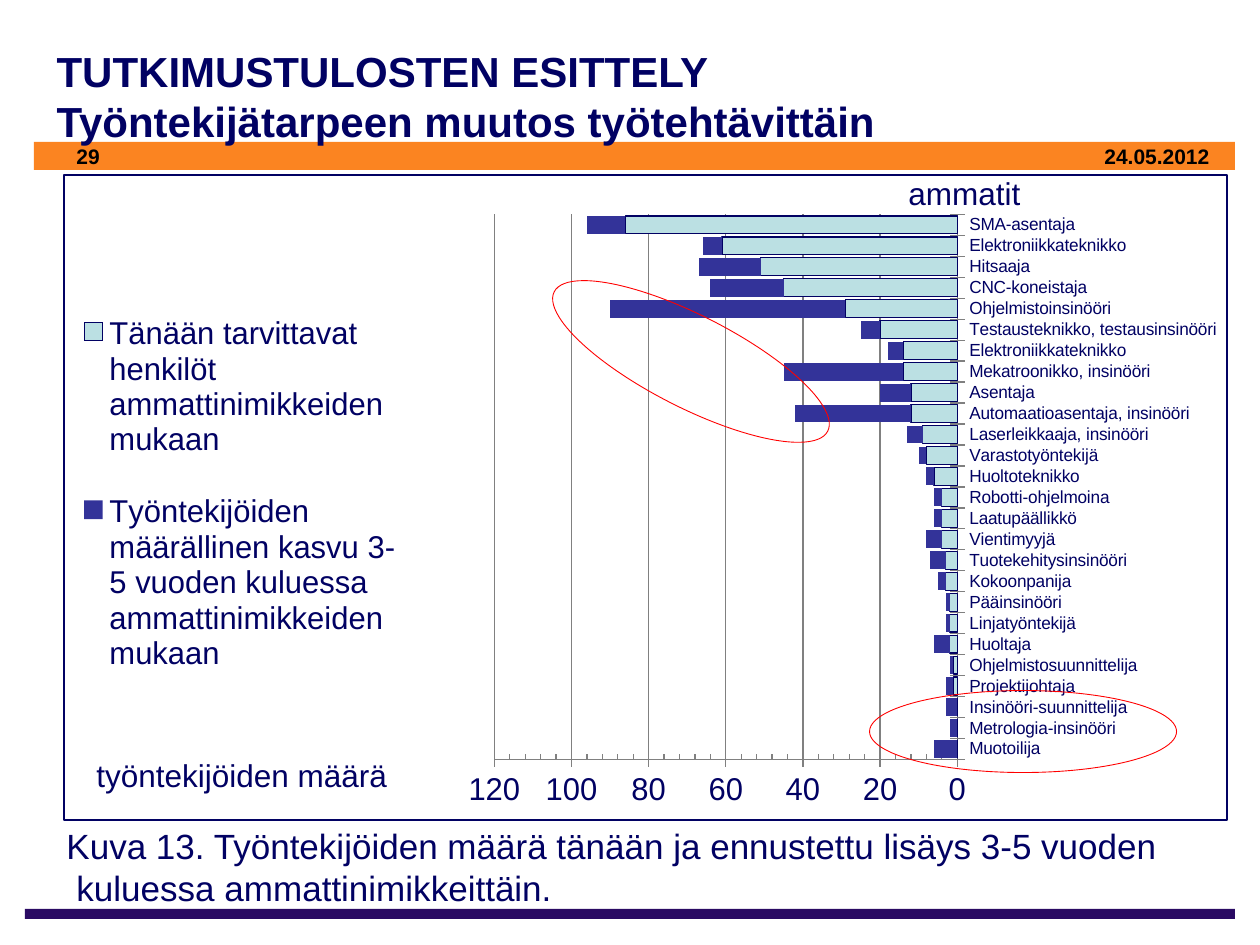
from pptx import Presentation
from pptx.chart.data import CategoryChartData
from pptx.dml.color import RGBColor
from pptx.enum.chart import XL_CHART_TYPE, XL_LEGEND_POSITION, XL_TICK_MARK
from pptx.enum.shapes import MSO_SHAPE
from pptx.enum.text import MSO_ANCHOR, PP_ALIGN
from pptx.oxml import parse_xml
from pptx.oxml.ns import nsdecls, qn
from pptx.util import Pt

BAR_STACKED = XL_CHART_TYPE.BAR_STACKED
LEGEND_RIGHT = XL_LEGEND_POSITION.RIGHT
CROSS, INSIDE = XL_TICK_MARK.CROSS, XL_TICK_MARK.INSIDE
RECTANGLE, OVAL = MSO_SHAPE.RECTANGLE, MSO_SHAPE.OVAL
TOP, MIDDLE, BOTTOM = MSO_ANCHOR.TOP, MSO_ANCHOR.MIDDLE, MSO_ANCHOR.BOTTOM
LEFT = PP_ALIGN.LEFT

NAVY, RED, GRAY, BLACK = "010163", "FF0000", "808080", "000000"
ORANGE, PURPLE, PALE, INDIGO = "FB8421", "2A0A63", "BBE0E3", "333399"

JOBS = [
    ("Muotoilija", 0, 6),
    ("Metrologia-insinööri", 0, 2),
    ("Insinööri-suunnittelija", 0, 3),
    ("Projektijohtaja", 1, 2),
    ("Ohjelmistosuunnittelija", 1, 1),
    ("Huoltaja", 2, 4),
    ("Linjatyöntekijä", 2, 1),
    ("Pääinsinööri", 2, 1),
    ("Kokoonpanija", 3, 2),
    ("Tuotekehitysinsinööri", 3, 4),
    ("Vientimyyjä", 4, 4),
    ("Laatupäällikkö", 4, 2),
    ("Robotti-ohjelmoina", 4, 2),
    ("Huoltoteknikko", 6, 2),
    ("Varastotyöntekijä", 8, 2),
    ("Laserleikkaaja, insinööri", 9, 4),
    ("Automaatioasentaja, insinööri", 12, 30),
    ("Asentaja", 12, 8),
    ("Mekatroonikko, insinööri", 14, 31),
    ("Elektroniikkateknikko", 14, 4),
    ("Testausteknikko, testausinsinööri", 20, 5),
    ("Ohjelmistoinsinööri", 29, 61),
    ("CNC-koneistaja", 45, 19),
    ("Hitsaaja", 51, 16),
    ("Elektroniikkateknikko", 61, 5),
    ("SMA-asentaja", 86, 10),
]
SERIES_NAMES = [
    "Tänään tarvittavat henkilöt ammattinimikkeiden mukaan",
    "Työntekijöiden määrällinen kasvu 3-5 vuoden kuluessa ammattinimikkeiden mukaan",
]


def px(length):
    return round(length * 914400 / 126)


def color(value):
    return RGBColor.from_string(value)


def chart_layout(x, y, width, height, inner=False):
    target = '<c:layoutTarget val="inner"/>' if inner else ""
    return parse_xml(
        f'<c:layout {nsdecls("c")}><c:manualLayout>{target}'
        '<c:xMode val="edge"/><c:yMode val="edge"/>'
        f'<c:x val="{x}"/><c:y val="{y}"/><c:w val="{width}"/><c:h val="{height}"/>'
        "</c:manualLayout></c:layout>"
    )


class SlideBuilder:
    font_name = "Arial"

    def __init__(self, slide):
        self.slide = slide

    def style(self, font, size, value=NAVY, bold=False):
        font.name = self.font_name
        font.size = Pt(size)
        font.bold = bold
        font.color.rgb = color(value)

    def outline(self, line, value, width=0.75):
        line.color.rgb = color(value)
        line.width = Pt(width)

    def fill_text(self, shape, text, size, value=NAVY, bold=False, anchor=TOP):
        frame = shape.text_frame
        frame.word_wrap = True
        frame.vertical_anchor = anchor
        frame.text = text
        for paragraph in frame.paragraphs:
            paragraph.alignment = LEFT
            for run in paragraph.runs:
                self.style(run.font, size, value, bold)

    def title(self, text, box, size):
        shape = self.slide.shapes.title
        shape.left, shape.top, shape.width, shape.height = map(px, box)
        self.fill_text(shape, text, size, bold=True, anchor=MIDDLE)

    def text(self, text, box, size, value=NAVY, bold=False, anchor=TOP, hanging=0):
        shape = self.slide.shapes.add_textbox(*map(px, box))
        self.fill_text(shape, text, size, value, bold, anchor)
        if hanging:
            properties = shape.text_frame.paragraphs[0]._p.get_or_add_pPr()
            properties.set("marL", str(px(hanging)))
            properties.set("indent", str(-px(hanging)))

    def shape(self, kind, box, fill=None, line=None, width=0.75, rotation=0):
        shape = self.slide.shapes.add_shape(kind, *map(px, box))
        shape.shadow.inherit = False
        shape.rotation = rotation
        if fill:
            shape.fill.solid()
            shape.fill.fore_color.rgb = color(fill)
        else:
            shape.fill.background()
        if line:
            self.outline(shape.line, line, width)
        else:
            shape.line.fill.background()

    def chart(self, box):
        names, today, growth = zip(*JOBS)
        data = CategoryChartData()
        data.categories = names
        for name, values in zip(SERIES_NAMES, (today, growth)):
            data.add_series(name, values)
        chart = self.slide.shapes.add_chart(BAR_STACKED, *map(px, box), data).chart
        chart.has_title = False
        self.style(chart.font, 18)

        plot = chart.plots[0]
        plot.gap_width = 17
        plot.overlap = 100
        plot.vary_by_categories = False
        for series, fill in zip(plot.series, (PALE, INDIGO)):
            series.format.fill.solid()
            series.format.fill.fore_color.rgb = color(fill)
        self.outline(plot.series[0].format.line, NAVY)
        plot.series[1].format.line.fill.background()

        for axis, size in ((chart.category_axis, 10), (chart.value_axis, 18)):
            axis.major_tick_mark = CROSS
            self.style(axis.tick_labels.font, size)
            self.outline(axis.format.line, GRAY)
        value_axis = chart.value_axis
        value_axis.reverse_order = True
        value_axis.minimum_scale = 0
        value_axis.maximum_scale = 120
        value_axis.major_unit = 20
        value_axis.minor_unit = 4
        value_axis.minor_tick_mark = INSIDE
        value_axis.has_major_gridlines = True
        self.outline(value_axis.major_gridlines.format.line, GRAY)

        chart.has_legend = True
        legend = chart.legend
        legend.position = LEGEND_RIGHT
        legend.include_in_layout = False
        self.style(legend.font, 18)
        legend_position = legend._element.find(qn("c:legendPos"))
        legend_position.addnext(chart_layout(0.03, 0.13, 0.28, 0.66))
        plot_area = chart._chartSpace.chart.plotArea
        for layout in plot_area.findall(qn("c:layout")):
            plot_area.remove(layout)
        plot_area.insert(0, chart_layout(0.39, 0.03, 0.4, 0.84, inner=True))


def main():
    presentation = Presentation()
    presentation.slide_width = px(1260)
    presentation.slide_height = px(945)
    slide = presentation.slides.add_slide(presentation.slide_layouts[5])
    builder = SlideBuilder(slide)

    builder.shape(RECTANGLE, (25, 909, 1210, 10), fill=PURPLE)
    builder.shape(RECTANGLE, (34, 142, 1201, 28), fill=ORANGE)
    builder.text("29", (64, 126, 294, 49), 12, BLACK, bold=True, anchor=BOTTOM)
    builder.text("24.05.2012", (1092, 137, 135, 38), 12, BLACK, bold=True)
    slide.shapes._spTree.append(slide.shapes.title._element)
    builder.title(
        "TUTKIMUSTULOSTEN ESITTELY\vTyöntekijätarpeen muutos työtehtävittäin",
        (44, 26, 1052, 139), 24,
    )
    builder.shape(RECTANGLE, (64, 175, 1163, 645), line=NAVY)
    builder.text(
        "Kuva 13. Työntekijöiden määrä tänään ja ennustettu lisäys 3-5 vuoden "
        "kuluessa ammattinimikkeittäin.",
        (54, 818, 1181, 97), 20, hanging=10,
    )
    builder.text("ammatit", (896, 168, 198, 50), 18)
    builder.text("työntekijöiden määrä", (84, 750, 333, 50), 18)
    builder.chart((43, 195, 1177, 649))
    builder.shape(OVAL, (982, 578, 82, 307), line=RED, width=0.5, rotation=90)
    builder.shape(OVAL, (645, 208, 92, 307), line=RED, width=0.5, rotation=297)

    presentation.save("out.pptx")


if __name__ == "__main__":
    main()
